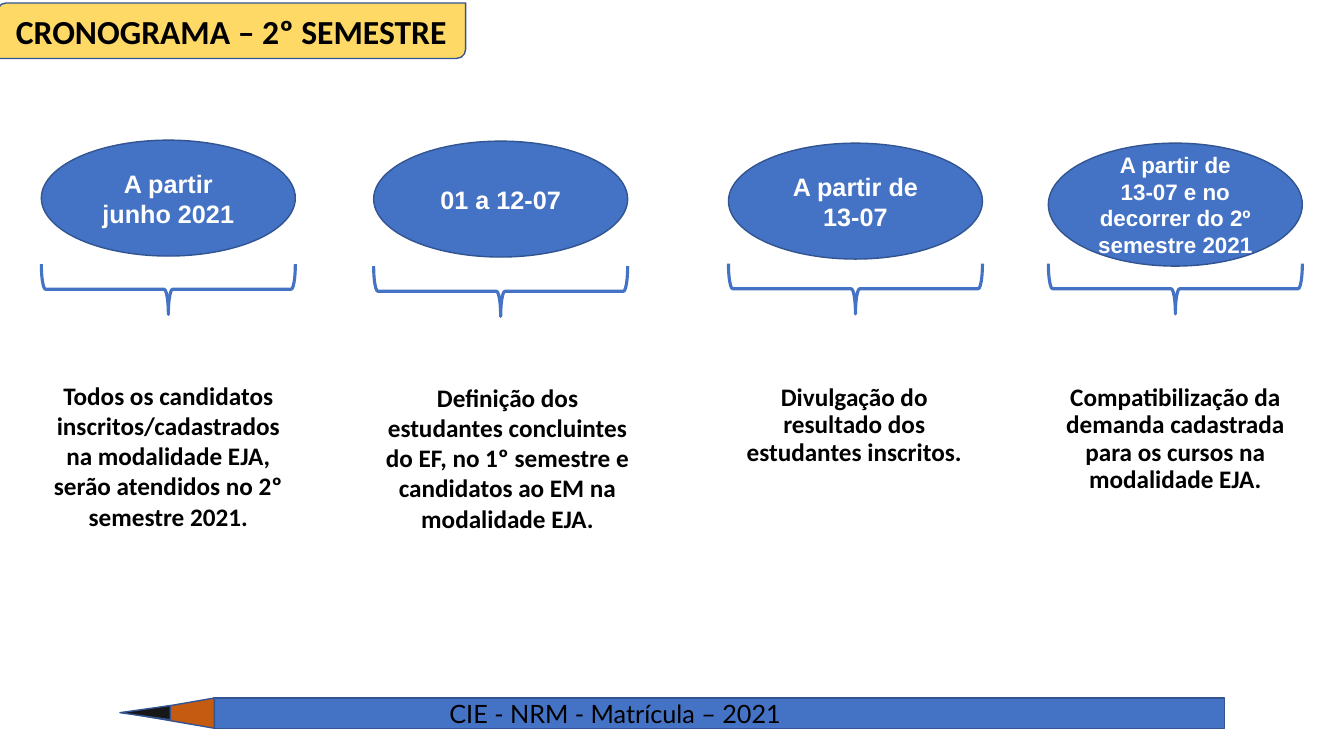
from pptx import Presentation
from pptx.dml.color import RGBColor
from pptx.enum.shapes import MSO_SHAPE as Kind
from pptx.enum.text import MSO_ANCHOR as Anchor, MSO_AUTO_SIZE as Fit, PP_ALIGN as Align
from pptx.util import Inches, Pt

WIDE, HIGH = 13.33, 7.5
COLS, ROWS = 40, 30
HUES = {
    "blue": "4472C4", "edge": "325491", "gold": "FFD966", "wood": "C55A11",
    "lead": "181717", "black": "000000", "white": "FFFFFF",
}


def hue(name):
    return RGBColor.from_string(HUES[name])


def write(frame, text, size=18, font="Calibri", color="black", bold=True,
          align=Align.CENTER, lead=None, after=None):
    """Fill a frame with one paragraph for each line of the text."""
    frame.word_wrap = True
    for i, line in enumerate(text.split("\n")):
        para = frame.add_paragraph() if i else frame.paragraphs[0]
        para.alignment = align
        if lead:
            para.line_spacing = lead
        if after:
            para.space_after = Pt(after)
        run = para.add_run()
        run.text = line
        run.font.size = Pt(size)
        run.font.name = font
        run.font.bold = bold
        run.font.color.rgb = hue(color)


class Board:
    """Draws on one slide; boxes are (column, row, columns, rows)."""

    def __init__(self, deck):
        self.slide = deck.slides.add_slide(deck.slide_layouts[6])
        self.shapes = self.slide.shapes

    def place(self, box):
        x, y, w, h = box
        return [Inches(n) for n in (x * WIDE / COLS, y * HIGH / ROWS,
                                    w * WIDE / COLS, h * HIGH / ROWS)]

    def shape(self, kind, box, fill=None, line="edge", width=1, turn=0):
        """Add a shape whose box is the one seen after a quarter turn."""
        x, y, w, h = self.place(box)
        if turn:
            x, y, w, h = x + (w - h) // 2, y + (h - w) // 2, h, w
        item = self.shapes.add_shape(kind, x, y, w, h)
        item.rotation = turn
        item.shadow.inherit = False
        if fill:
            item.fill.solid()
            item.fill.fore_color.rgb = hue(fill)
        else:
            item.fill.background()
        item.line.color.rgb = hue(line)
        item.line.width = Pt(width)
        return item

    def label(self, kind, box, fill, text, **style):
        frame = self.shape(kind, box, fill).text_frame
        frame.vertical_anchor = Anchor.MIDDLE
        write(frame, text, **style)

    def text(self, box, text, **style):
        frame = self.shapes.add_textbox(*self.place(box)).text_frame
        write(frame, text, **style)
        frame.auto_size = Fit.SHAPE_TO_FIT_TEXT

    def pencil(self):
        self.shape(Kind.RECTANGLE, (6.35, 27.7, 30.09, 1.2), "blue", turn=270)
        self.shape(Kind.ISOSCELES_TRIANGLE, (3.77, 27.7, 2.61, 1.2), "wood", turn=270)
        self.shape(Kind.ISOSCELES_TRIANGLE, (3.57, 28, 1.5, 0.56), "lead", turn=270)

    def step(self, col, top, high, date, size, brace, note, body, **style):
        """Add a date oval, the brace under it and its note."""
        self.label(Kind.FLOWCHART_CONNECTOR, (col, top, STEP, high), "blue", date,
                   size=size, font="Arial", color="white")
        self.shape(Kind.RIGHT_BRACE, (col, brace, STEP, 2), line="blue",
                   width=2.25, turn=90)
        self.text(note, body, **style)


STEP = 7.56
TIGHT = {"lead": 0.9, "after": 5}
STEPS = [
    (1.23, 5.56, 4.6, "A partir junho 2021", 18, 10.48, (1.23, 14.88, STEP, 6.48),
     "Todos os candidatos inscritos/cadastrados na modalidade EJA, "
     "serão atendidos no 2º semestre 2021.", {}),
    (11.12, 5.6, 4.6, "01 a 12-07", 18, 10.56, (11.1, 14.96, 8.01, 6.48),
     "Definição dos estudantes concluintes do EF, no 1º semestre e "
     "candidatos ao EM na modalidade EJA.", {}),
    (21.68, 5.68, 4.6, "A partir de 13-07", 18, 10.46, (21.66, 15.08, 7.53, 3.68),
     "Divulgação do resultado dos estudantes inscritos.", TIGHT),
    (31.2, 5.68, 4.88, "A partir de\n13-07 e no decorrer do 2º semestre 2021", 16, 10.46,
     (31.2, 15.08, STEP, 4.76),
     "Compatibilização da demanda cadastrada para os cursos na modalidade EJA.", TIGHT),
]


def main():
    deck = Presentation()
    deck.slide_width, deck.slide_height = Inches(WIDE), Inches(HIGH)
    board = Board(deck)
    board.pencil()
    board.label(Kind.ROUND_2_DIAG_RECTANGLE, (-0.09, 0.12, 13.95, 2.2), "gold",
                "CRONOGRAMA – 2º SEMESTRE", size=24)
    board.text((13.08, 27.52, 19.5, 1.6), "CIE - NRM - Matrícula – 2021",
               font="Lato", bold=False, align=Align.LEFT)
    for *step, style in STEPS:
        board.step(*step, **style)
    deck.save("out.pptx")


if __name__ == "__main__":
    main()
